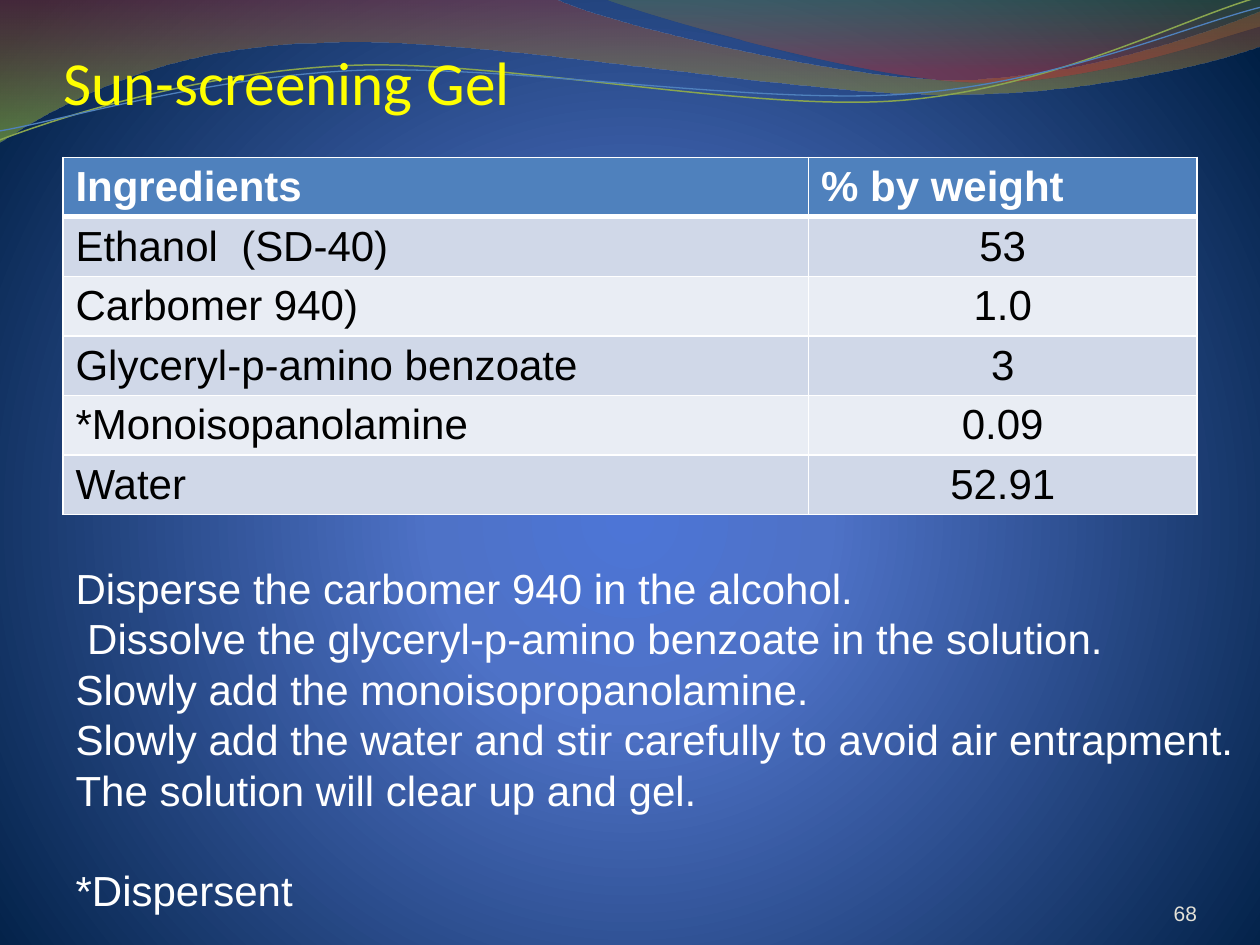
from lxml.etree import SubElement
from pptx import Presentation
from pptx.dml.color import RGBColor
from pptx.enum.text import MSO_ANCHOR, MSO_AUTO_SIZE, PP_ALIGN
from pptx.oxml.ns import qn
from pptx.util import Cm, Pt

WHITE = RGBColor(0xFF, 0xFF, 0xFF)
BLACK = RGBColor(0x00, 0x00, 0x00)
YELLOW = RGBColor(0xFF, 0xFF, 0x00)
IVORY = RGBColor(0xE3, 0xE1, 0xD7)
HEADER_BLUE = RGBColor(0x4F, 0x81, 0xBD)
BAND_DARK = RGBColor(0xD0, 0xD8, 0xE8)
BAND_LIGHT = RGBColor(0xE9, 0xED, 0xF4)
LINE_GREEN = RGBColor(0x89, 0xA5, 0x4F)
WAVE_RED = RGBColor(0x97, 0x33, 0x30)
WAVE_GREEN = RGBColor(0x95, 0xC2, 0x38)
CREST_GREEN = RGBColor(0x76, 0x95, 0x37)
CREST_RED = RGBColor(0xBE, 0x33, 0x30)
GLOW_BLUE = RGBColor(0x4D, 0x75, 0xD6)
MID_BLUE = RGBColor(0x4E, 0x72, 0xC7)
NIGHT_BLUE = RGBColor(0x00, 0x1F, 0x44)

WAVE = [[(0, -0.03)], [(11.18, -0.03)], [(12.09, 0.43), (16.87, 1.6), (19.25, 1.6)],
        [(21.67, 1.6), (24.33, 0.66), (25.4, 0.23)], [(25.43, 0.91)],
        [(24.97, 1.12), (22.1, 1.93), (18.95, 1.9)],
        [(15.8, 1.9), (9.7, 0.71), (6.53, 0.86)],
        [(3.28, 0.89), (1.17, 2.11), (-0.03, 2.87)]]
CREST = [[(12.17, -0.03)], [(12.93, 0.28), (17.32, 1.57), (19.53, 1.65)],
         [(21.74, 1.75), (24.41, 0.81), (25.4, 0.53)], [(25.4, 0)]]
GREEN_STRAND = [[(0, 2.82)], [(1.22, 2.36), (4.01, 1.45), (7.04, 1.32)],
                [(10.03, 1.19), (15.06, 2.26), (18.11, 2.03)],
                [(21.16, 1.8), (23.83, 0.38), (25.35, -0.05)]]
BLUE_STRAND = [[(0, 2.64)], [(1.19, 2.44), (4.17, 1.55), (7.19, 1.42)],
               [(10.24, 1.3), (15.16, 2.11), (18.21, 1.9)],
               [(21.23, 1.7), (23.9, 0.53), (25.4, 0.15)]]

INGREDIENTS = [("Ingredients", "% by weight"), ("Ethanol  (SD-40)", "53"),
               ("Carbomer 940)", "1.0"), ("Glyceryl-p-amino benzoate", "3"),
               ("*Monoisopanolamine", "0.09"), ("Water", "52.91")]
STEPS = ["Disperse the carbomer 940 in the alcohol.",
         " Dissolve the glyceryl-p-amino benzoate in the solution.",
         "Slowly add the monoisopropanolamine.",
         "Slowly add the water and stir carefully to avoid air entrapment.",
         "The solution will clear up and gel.",
         "*Dispersent"]


def style(para, font, size, color, align=PP_ALIGN.LEFT, bold=False):
    """Align a paragraph and format its runs."""
    para.alignment = align
    for span in para.runs:
        span.font.name = font
        span.font.size = Pt(size)
        span.font.bold = bold
        span.font.color.rgb = color


def place(box, left, top, width, height):
    """Move and size a shape, in centimetres."""
    box.left, box.top = Cm(left), Cm(top)
    box.width, box.height = Cm(width), Cm(height)


def set_gradient(fill, element, stops, radial=False):
    """Give a fill its (position, colour, opacity) stops, radial or downwards."""
    fill.gradient()
    gradient = element.find(".//" + qn("a:gradFill"))
    for child in list(gradient):
        gradient.remove(child)
    stop_list = SubElement(gradient, qn("a:gsLst"))
    for position, color, opacity in stops:
        stop = SubElement(stop_list, qn("a:gs"), pos=str(position * 1000))
        tint = SubElement(stop, qn("a:srgbClr"), val=str(color))
        if opacity < 100:
            SubElement(tint, qn("a:alpha"), val=str(opacity * 1000))
    if radial:
        circle = SubElement(gradient, qn("a:path"), path="circle")
        SubElement(circle, qn("a:fillToRect"), l="10000", t="110000", r="10000", b="100000")
    else:
        SubElement(gradient, qn("a:lin"), ang="5400000", scaled="0")


def bend(element, segments):
    """Merge each three-point segment of a freeform into one cubic curve."""
    lines = iter(element.findall(".//" + qn("a:lnTo")))
    for segment in segments:
        group = [next(lines) for _ in segment]
        if len(group) == 3:
            curve = group[0].makeelement(qn("a:cubicBezTo"))
            group[0].addprevious(curve)
            for line in group:
                curve.append(line[0])
                line.getparent().remove(line)


def add_curve(page, outline, depth, closed):
    """Add a freeform at a given depth behind the placeholders."""
    start, *rest = [(Cm(x), Cm(y)) for segment in outline for x, y in segment]
    builder = page.shapes.build_freeform(*start)
    builder.add_line_segments(rest, close=closed)
    shape = builder.convert_to_shape()
    shape.shadow.inherit = False
    element = shape.element
    bend(element, outline[1:])
    element.getparent().insert(2 + depth, element)
    return shape


def add_wave(page, outline, depth, stops):
    """Add a translucent wave without an outline."""
    wave = add_curve(page, outline, depth, True)
    set_gradient(wave.fill, wave.element, stops)
    wave.line.fill.background()


def add_strand(page, outline, depth, color, width):
    """Add a thin curved line."""
    strand = add_curve(page, outline, depth, False)
    strand.fill.background()
    strand.line.color.rgb = color
    strand.line.width = Pt(width)


def set_title(page, text):
    """Fill and format the title placeholder."""
    title = page.shapes.title
    place(title, 1.27, 0.62, 10.16, 1.75)
    frame = title.text_frame
    frame.text = text
    frame.vertical_anchor = MSO_ANCHOR.BOTTOM
    frame.auto_size = MSO_AUTO_SIZE.NONE
    frame.margin_left = frame.margin_right = frame.margin_bottom = 0
    style(frame.paragraphs[0], "Calibri", 35, YELLOW)


def set_steps(page, steps):
    """Fill the body placeholder with unbulleted steps and a final footnote."""
    body = page.placeholders[1]
    place(body, 1.27, 11.21, 24.1, 7.44)
    frame = body.text_frame
    frame.text = "\n".join(steps)
    frame.word_wrap = False
    frame.auto_size = MSO_AUTO_SIZE.NONE
    frame.vertical_anchor = MSO_ANCHOR.TOP
    for para in frame.paragraphs:
        style(para, "Arial", 24, WHITE)
        para.line_spacing = Pt(28.8)
        para.space_before = para.space_after = Pt(0)
        properties = para._p.get_or_add_pPr()
        properties.set("marL", "0")
        properties.set("indent", "0")
        SubElement(properties, qn("a:buNone"))
    frame.paragraphs[-1].space_before = Pt(28.8)


def set_borders(cell, bottom):
    """Draw white borders around a cell."""
    properties = cell._tc.get_or_add_tcPr()
    for side, width in (("L", 1), ("R", 1), ("T", 1), ("B", bottom)):
        line = SubElement(properties, qn(f"a:ln{side}"), w=str(Pt(width)))
        SubElement(SubElement(line, qn("a:solidFill")), qn("a:srgbClr"), val=str(WHITE))


def add_ingredients(page, rows):
    """Add the banded table of ingredients."""
    table = page.shapes.add_table(len(rows), 2, Cm(1.27), Cm(3.17), Cm(22.86), Cm(7.2)).table
    table.columns[0].width, table.columns[1].width = Cm(15.03), Cm(7.83)
    for i, values in enumerate(rows):
        header = i == 0
        band = HEADER_BLUE if header else (BAND_LIGHT, BAND_DARK)[i % 2]
        for j, value in enumerate(values):
            cell = table.cell(i, j)
            cell.text = value
            align = PP_ALIGN.CENTER if j and not header else PP_ALIGN.LEFT
            style(cell.text_frame.paragraphs[0], "Arial", 24,
                  WHITE if header else BLACK, align, header)
            set_borders(cell, 3 if header else 1)
            cell.fill.solid()
            cell.fill.fore_color.rgb = band


def add_page_number(page, text):
    """Add the page number at the lower right."""
    box = page.shapes.add_textbox(Cm(22.02), Cm(17.65), Cm(2.11), Cm(1.02))
    frame = box.text_frame
    frame.text = text
    frame.word_wrap = True
    frame.vertical_anchor = MSO_ANCHOR.BOTTOM
    frame.margin_left = frame.margin_right = frame.margin_top = frame.margin_bottom = 0
    style(frame.paragraphs[0], "Arial", 12, IVORY, PP_ALIGN.RIGHT)


def main():
    """Build the slide and save the deck."""
    deck = Presentation()
    deck.slide_width, deck.slide_height = Cm(25.4), Cm(19.05)
    page = deck.slides.add_slide(deck.slide_layouts[1])
    set_gradient(page.background.fill, page.element,
                 [(0, GLOW_BLUE, 100), (25, MID_BLUE, 100), (100, NIGHT_BLUE, 100)], radial=True)
    add_wave(page, WAVE, 0, [(0, WAVE_RED, 45), (100, WAVE_GREEN, 55)])
    add_wave(page, CREST, 1, [(0, CREST_GREEN, 30), (80, CREST_RED, 45)])
    add_strand(page, GREEN_STRAND, 2, LINE_GREEN, 0.85)
    add_strand(page, BLUE_STRAND, 3, HEADER_BLUE, 0.75)
    set_title(page, "Sun-screening Gel")
    add_ingredients(page, INGREDIENTS)
    set_steps(page, STEPS)
    add_page_number(page, "68")
    deck.save("out.pptx")


if __name__ == "__main__":
    main()
